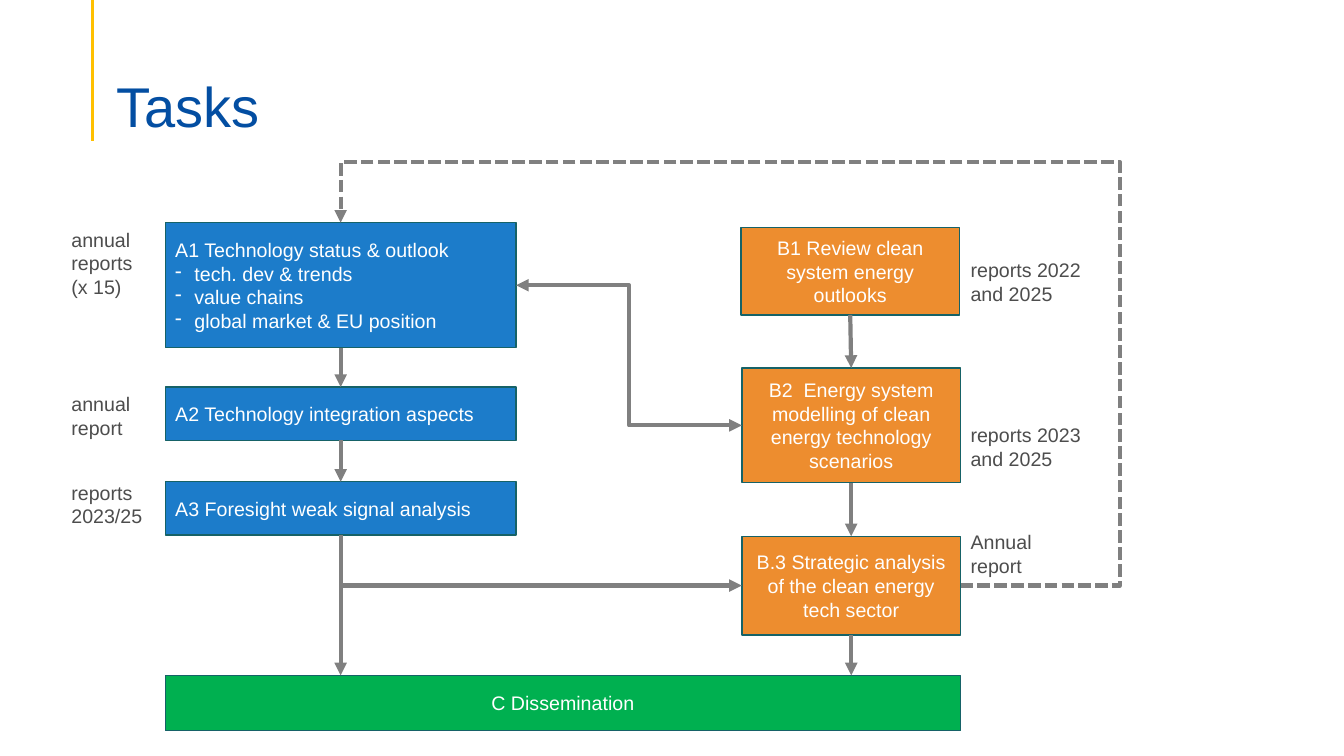
from lxml.etree import SubElement
from pptx import Presentation
from pptx.dml.color import RGBColor
from pptx.enum.dml import MSO_LINE
from pptx.enum.shapes import MSO_CONNECTOR, MSO_SHAPE
from pptx.enum.text import MSO_ANCHOR, PP_ALIGN
from pptx.oxml.ns import qn
from pptx.util import Inches, Pt

COLORS = {
    "title": "034EA2", "accent": "FFC000", "technology": "1C7CCA",
    "system": "ED8D2F", "dissemination": "00B050", "border": "166267",
    "arrow": "808080", "label": "4D4D4D", "white": "FFFFFF",
}
FONT = "Arial"

# The slide is a grid of 40 columns and 30 rows
WIDTH, HEIGHT = Inches(13.333), Inches(7.5)
COLUMNS, ROWS = 40, 30

# Columns and rows shared by several parts
TASK_LEFT, TASK_WIDTH = 4.92, 10.44
SYSTEM_LEFT, SYSTEM_WIDTH = 22.08, 6.51
SYSTEM_RIGHT = SYSTEM_LEFT + SYSTEM_WIDTH
TASK_CENTER = TASK_LEFT + TASK_WIDTH / 2
SYSTEM_CENTER = SYSTEM_LEFT + SYSTEM_WIDTH / 2
BAR_TOP, BAR_HEIGHT = 26.8, 2.2
STRATEGY_MIDDLE = 23.24

BULLET = "- "
TASKS = [  # text, top, height
    ("A1 Technology status & outlook\n- tech. dev & trends\n- value chains\n"
     "- global market & EU position", 8.84, 4.96),
    ("A2 Technology integration aspects", 15.36, 2.12),
    ("A3 Foresight weak signal analysis", 19.12, 2.12),
]
SYSTEMS = [  # text, left, top, height
    ("B1 Review clean system energy outlooks", SYSTEM_LEFT - 0.03, 9.04, 3.46),
    ("B2  Energy system modelling of clean energy technology scenarios",
     SYSTEM_LEFT, 14.6, 4.56),
    ("B.3 Strategic analysis of the clean energy tech sector",
     SYSTEM_LEFT, 21.28, 3.92),
]
LABELS = [  # text, left, top, width, height
    ("annual reports (x 15)", 1.83, 8.84, 2.91, 3.24),
    ("annual report", 1.83, 15.36, 2.37, 2.28),
    ("reports 2023/25", 1.83, 18.88, 3.09, 2.28),
    ("reports 2022 and 2025", SYSTEM_RIGHT, 10.04, 4.17, 2.28),
    ("reports 2023 and 2025", SYSTEM_RIGHT, 16.6, 4.29, 2.28),
    ("Annual report", SYSTEM_RIGHT, 20.84, 3.54, 2.28),
]


def color(name):
    return RGBColor.from_string(COLORS[name])


def grid(*lengths):
    """Turn alternating columns and rows into slide lengths."""
    units = (WIDTH / COLUMNS, HEIGHT / ROWS)
    return [round(length * units[i % 2]) for i, length in enumerate(lengths)]


def add_dash_bullet(para):
    properties = para._p.get_or_add_pPr()
    properties.set("marL", str(Inches(0.19)))
    properties.set("indent", str(-Inches(0.19)))
    SubElement(properties, qn("a:buChar"), char=BULLET.strip())


def write(frame, text, ink, size=14, align=PP_ALIGN.LEFT):
    frame.word_wrap = True
    for i, line in enumerate(text.split("\n")):
        para = frame.add_paragraph() if i else frame.paragraphs[0]
        if line.startswith(BULLET):
            add_dash_bullet(para)
        para.text = line.removeprefix(BULLET)
        para.alignment = align
        para.font.name, para.font.size = FONT, Pt(size)
        para.font.color.rgb = color(ink)


def add_box(page, text, fill, area, align=PP_ALIGN.CENTER):
    box = page.shapes.add_shape(MSO_SHAPE.RECTANGLE, *grid(*area))
    box.shadow.inherit = False
    box.fill.solid()
    box.fill.fore_color.rgb = color(fill)
    box.line.color.rgb = color("border")
    box.line.width = Pt(1)
    box.text_frame.vertical_anchor = MSO_ANCHOR.MIDDLE
    write(box.text_frame, text, "white", align=align)
    return box


def add_text(page, text, ink, area, size=14):
    box = page.shapes.add_textbox(*grid(*area))
    write(box.text_frame, text, ink, size)
    return box.text_frame


def add_line(page, ends, ink="arrow", width=3, kind=MSO_CONNECTOR.STRAIGHT,
             dash=None, arrows=("tailEnd",)):
    """Arrows: headEnd points at the start, tailEnd at the end."""
    line = page.shapes.add_connector(kind, *grid(*ends))
    line.line.color.rgb = color(ink)
    line.line.width = Pt(width)
    if dash:
        line.line.dash_style = dash
    for arrow in arrows:
        SubElement(line.line._get_or_add_ln(), qn("a:" + arrow), type="triangle")
    SubElement(line._element.spPr, qn("a:effectLst"))
    return line


def bend(line, preset, *adjustments):
    geometry = line._element.spPr.find(qn("a:prstGeom"))
    geometry.set("prst", preset)
    guides = geometry.find(qn("a:avLst"))
    for i, value in enumerate(adjustments, 1):
        SubElement(guides, qn("a:gd"), name=f"adj{i}",
                   fmla=f"val {round(value * 100000)}")


def add_chain(page, boxes):
    """Join each box to the one below it."""
    for upper, lower in zip(boxes, boxes[1:]):
        arrow = add_line(page, (0, 0, 1, 1))
        arrow.begin_connect(upper, 2)
        arrow.end_connect(lower, 0)


def add_bent_arrows(page):
    # A1 and B2 inform each other
    add_line(page, (TASK_LEFT + TASK_WIDTH, 11.32, SYSTEM_LEFT, 16.88),
             kind=MSO_CONNECTOR.ELBOW, arrows=("headEnd", "tailEnd"))
    # A3 feeds B.3
    feed = add_line(page, (SYSTEM_LEFT, STRATEGY_MIDDLE, TASK_CENTER, 21.24),
                    kind=MSO_CONNECTOR.ELBOW, arrows=("headEnd",))
    bend(feed, "bentConnector2")
    # Feedback from B.3 round to A1
    start, end = (SYSTEM_RIGHT, STRATEGY_MIDDLE), (TASK_CENTER, 8.84)
    loop_right, loop_top = 33.34, 6.44
    feedback = add_line(page, start + end, kind=MSO_CONNECTOR.ELBOW,
                        dash=MSO_LINE.SQUARE_DOT)
    bend(feedback, "bentConnector4",
         (start[0] - loop_right) / (start[0] - end[0]),
         (start[1] - loop_top) / (start[1] - end[1]))


def main():
    deck = Presentation()
    deck.slide_width, deck.slide_height = WIDTH, HEIGHT
    page = deck.slides.add_slide(deck.slide_layouts[6])

    # Title with its accent line
    add_line(page, (2.76, 0, 2.76, 5.6), "accent", 2.25, arrows=())
    title = add_text(page, "Tasks", "title", (3.18, 2.12, 36.12, 3.44), 40)
    title.vertical_anchor = MSO_ANCHOR.BOTTOM
    title.margin_bottom = 0
    title.paragraphs[0].line_spacing = 0.9

    # Task boxes
    tasks = [add_box(page, text, "technology",
                     (TASK_LEFT, top, TASK_WIDTH, height), PP_ALIGN.LEFT)
             for text, top, height in TASKS]
    systems = [add_box(page, text, "system", (left, top, SYSTEM_WIDTH, height))
               for text, left, top, height in SYSTEMS]
    add_box(page, "C Dissemination", "dissemination",
            (TASK_LEFT, BAR_TOP, SYSTEM_RIGHT - TASK_LEFT, BAR_HEIGHT))

    # Report labels
    for text, *area in LABELS:
        add_text(page, text, "label", area)

    # Arrows
    add_chain(page, tasks)
    add_chain(page, systems)
    for center, top in ((TASK_CENTER, 21.24), (SYSTEM_CENTER, 25.2)):
        add_line(page, (center, top, center, BAR_TOP))
    add_bent_arrows(page)

    deck.save("out.pptx")


if __name__ == "__main__":
    main()
